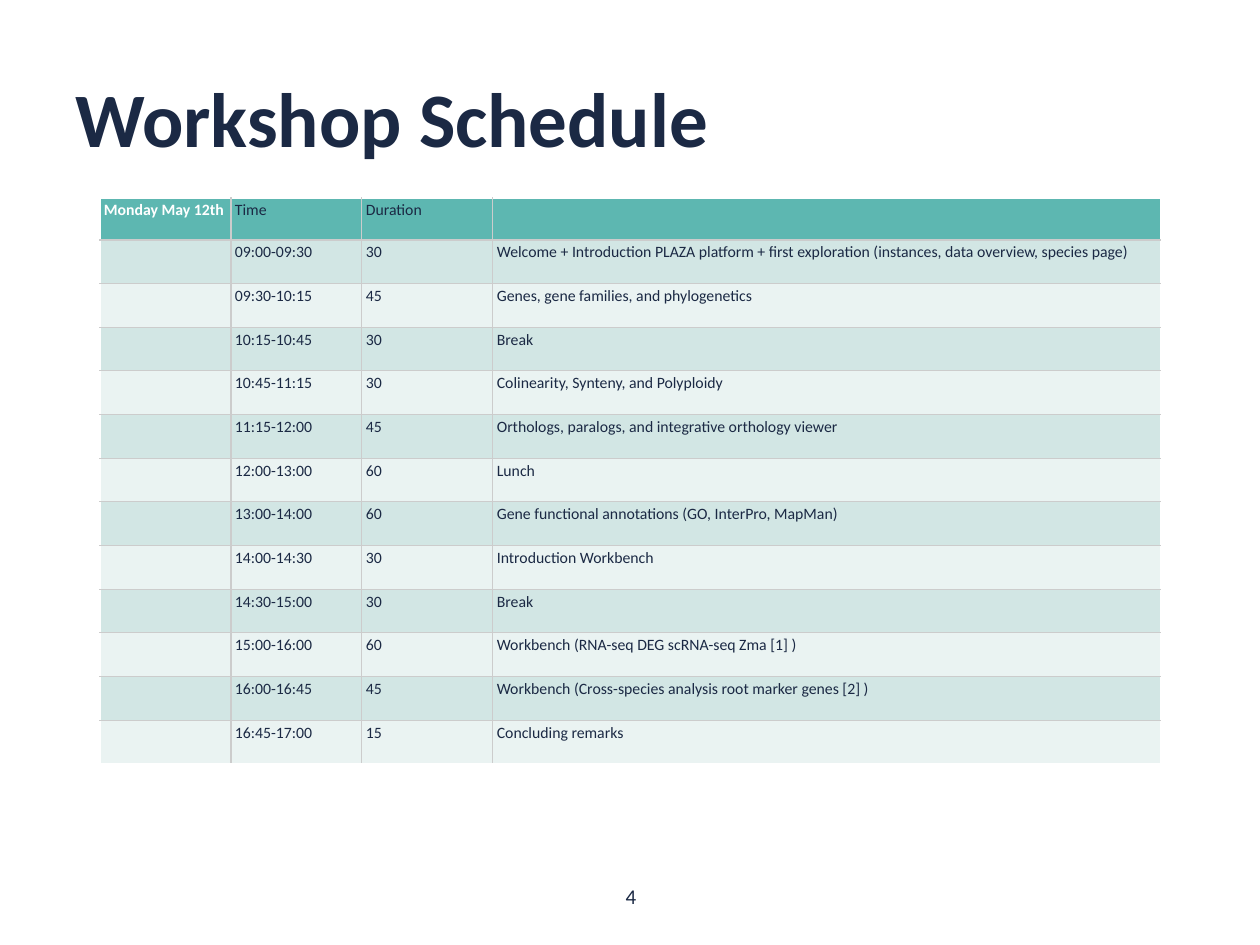
from lxml.etree import SubElement
from pptx import Presentation
from pptx.dml.color import RGBColor as Color
from pptx.enum.text import MSO_ANCHOR as Anchor, PP_ALIGN as Align
from pptx.oxml.ns import qn
from pptx.util import Emu, Pt

SCALE = 914400 / 126
THEME = {
    "font": "Calibri", "ink": "1B2944", "white": "FFFFFF", "rule": "CCCCCC",
    "header": "5DB7B1", "bands": ("D2E6E4", "EAF3F2"),
    "title_size": 44, "table_size": 9, "number_size": 12, "rule_width": 0.75,
}
SCHEDULE = [
    ("Monday May 12th", "Time", "Duration", ""),
    ("", "09:00-09:30", "30", "Welcome + Introduction PLAZA platform + first exploration "
                              "(instances, data overview, species page)"),
    ("", "09:30-10:15", "45", "Genes, gene families, and phylogenetics"),
    ("", "10:15-10:45", "30", "Break"),
    ("", "10:45-11:15", "30", "Colinearity, Synteny, and Polyploidy"),
    ("", "11:15-12:00", "45", "Orthologs, paralogs, and integrative orthology viewer"),
    ("", "12:00-13:00", "60", "Lunch"),
    ("", "13:00-14:00", "60", "Gene functional annotations (GO, InterPro, MapMan)"),
    ("", "14:00-14:30", "30", "Introduction Workbench"),
    ("", "14:30-15:00", "30", "Break"),
    ("", "15:00-16:00", "60", "Workbench (RNA-seq DEG scRNA-seq Zma [1] )"),
    ("", "16:00-16:45", "45", "Workbench (Cross-species analysis root marker genes [2] )"),
    ("", "16:45-17:00", "15", "Concluding remarks"),
]
COLUMN_WIDTHS = (131, 131, 131, 668)
HEADER_HEIGHT, BODY_HEIGHT = 42, 524


def px(length):
    return Emu(round(length * SCALE))


def write(paragraph, text, size, color=THEME["ink"], bold=False):
    run = paragraph.add_run()
    run.text = text
    values = {"name": THEME["font"], "size": Pt(size), "bold": bold}
    for name, value in values.items():
        setattr(run.font, name, value)
    run.font.color.rgb = Color.from_string(color)


presentation = Presentation()
presentation.slide_width, presentation.slide_height = px(1260), px(945)
slide = presentation.slides.add_slide(presentation.slide_layouts[6])

labels = [
    ("Workshop Schedule", (63, 38, 1134, 158), THEME["title_size"], True,
     {"vertical_anchor": Anchor.MIDDLE}, {"alignment": Align.LEFT}),
    ("4", (484, 877, 294, 50), THEME["number_size"], False,
     {"vertical_anchor": Anchor.TOP}, {"alignment": Align.CENTER, "space_after": Pt(6)}),
]
for text, box, size, bold, frame_format, paragraph_format in labels:
    frame = slide.shapes.add_textbox(*map(px, box)).text_frame
    frame.word_wrap = True
    paragraph = frame.paragraphs[0]
    for target, values in ((frame, frame_format), (paragraph, paragraph_format)):
        for name, value in values.items():
            setattr(target, name, value)
    write(paragraph, text, size, bold=bold)

row_count, column_count = len(SCHEDULE), len(COLUMN_WIDTHS)
table = slide.shapes.add_table(
    row_count, column_count, px(100), px(198),
    px(sum(COLUMN_WIDTHS)), px(HEADER_HEIGHT + BODY_HEIGHT)).table
for column, width in zip(table.columns, COLUMN_WIDTHS):
    column.width = px(width)

cell_format = {
    "margin_left": px(4), "margin_right": px(4),
    "margin_top": px(3), "margin_bottom": px(3),
    "vertical_anchor": Anchor.TOP,
}
for row_index, entries in enumerate(SCHEDULE):
    is_header = row_index == 0
    table.rows[row_index].height = px(HEADER_HEIGHT if is_header else BODY_HEIGHT / (row_count - 1))
    fill = THEME["header"] if is_header else THEME["bands"][(row_index - 1) % 2]
    for column_index, text in enumerate(entries):
        cell = table.cell(row_index, column_index)
        for name, value in cell_format.items():
            setattr(cell, name, value)
        outer_edges = {
            "a:lnL": column_index == 0,
            "a:lnR": column_index == column_count - 1,
            "a:lnT": is_header,
            "a:lnB": row_index == row_count - 1,
        }
        for tag, is_outer in outer_edges.items():
            line = SubElement(cell._tc.get_or_add_tcPr(), qn(tag), w=str(Pt(THEME["rule_width"])))
            solid = SubElement(line, qn("a:solidFill"))
            SubElement(solid, qn("a:srgbClr"), val=THEME["white" if is_outer else "rule"])
        cell.fill.solid()
        cell.fill.fore_color.rgb = Color.from_string(fill)
        paragraph = cell.text_frame.paragraphs[0]
        is_day = is_header and column_index == 0
        if text:
            write(paragraph, text, THEME["table_size"], THEME["white" if is_day else "ink"], is_day)
        else:
            SubElement(paragraph._p, qn("a:endParaRPr"), sz=str(THEME["table_size"] * 100))

presentation.save("out.pptx")
